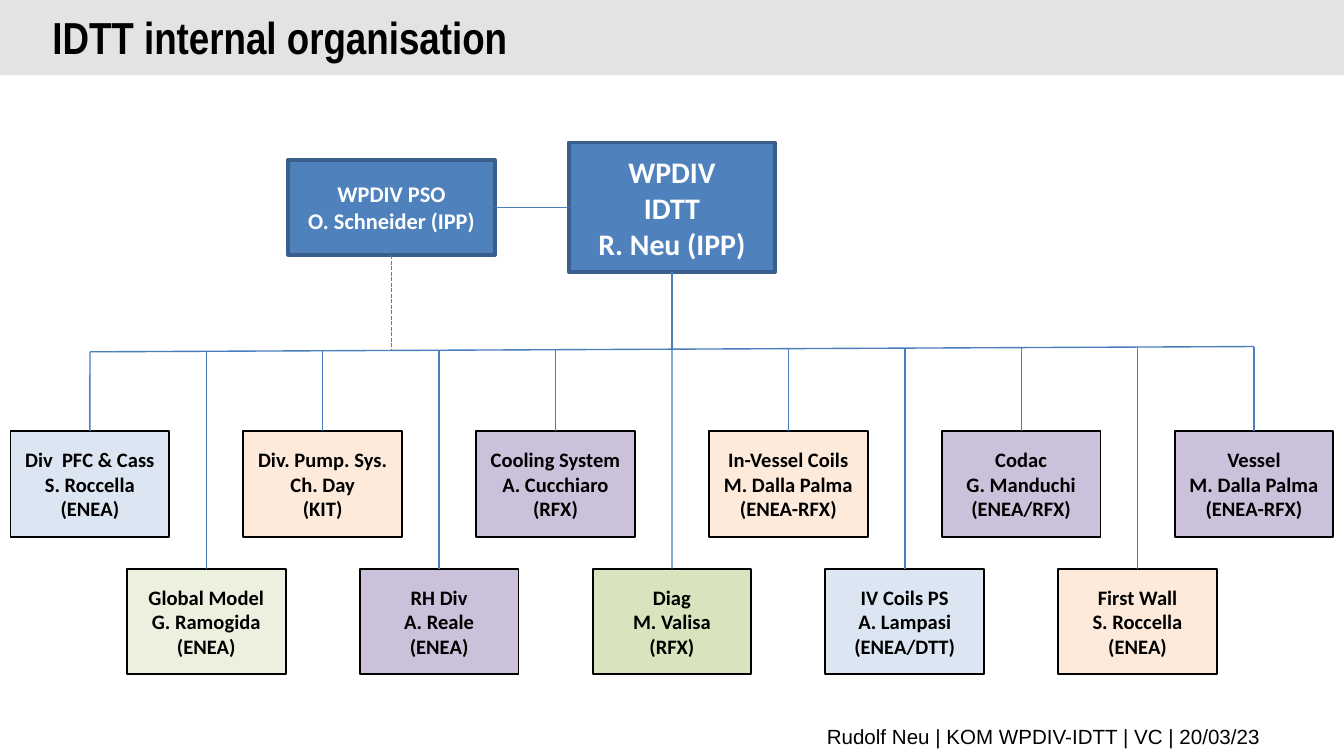
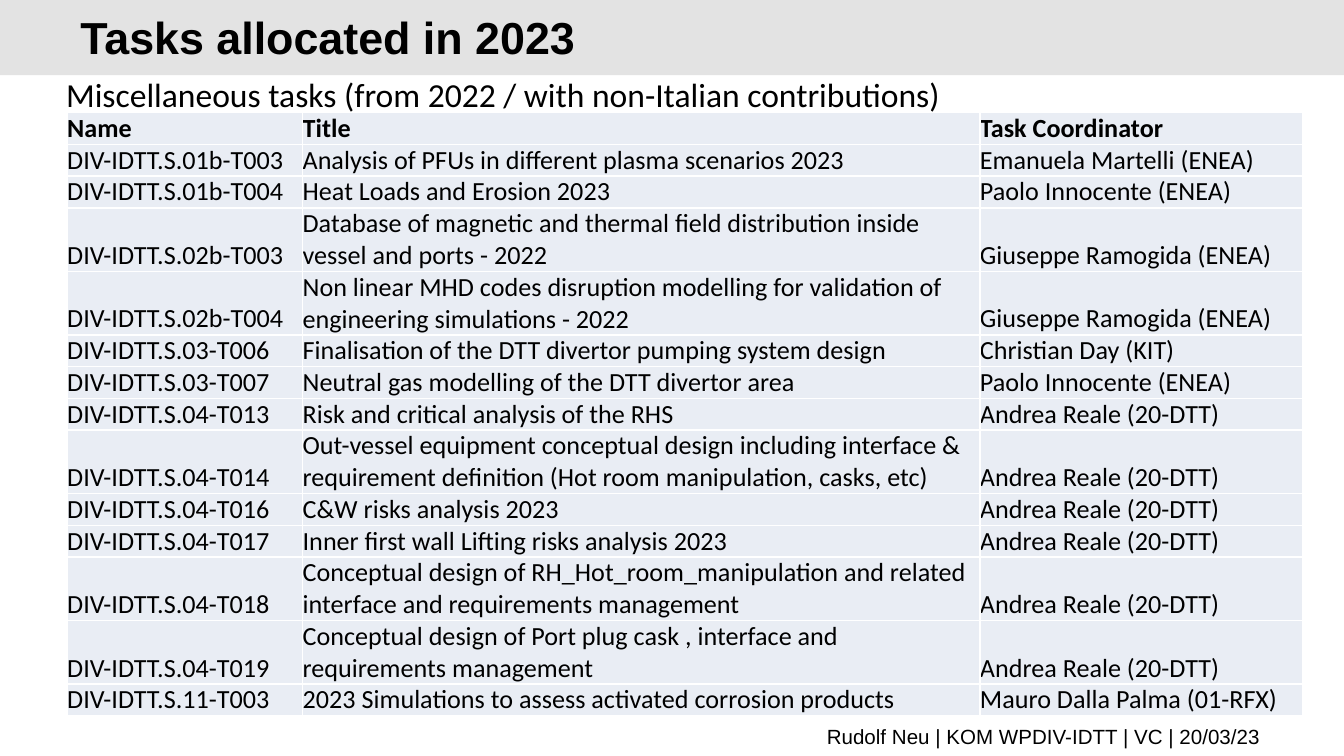
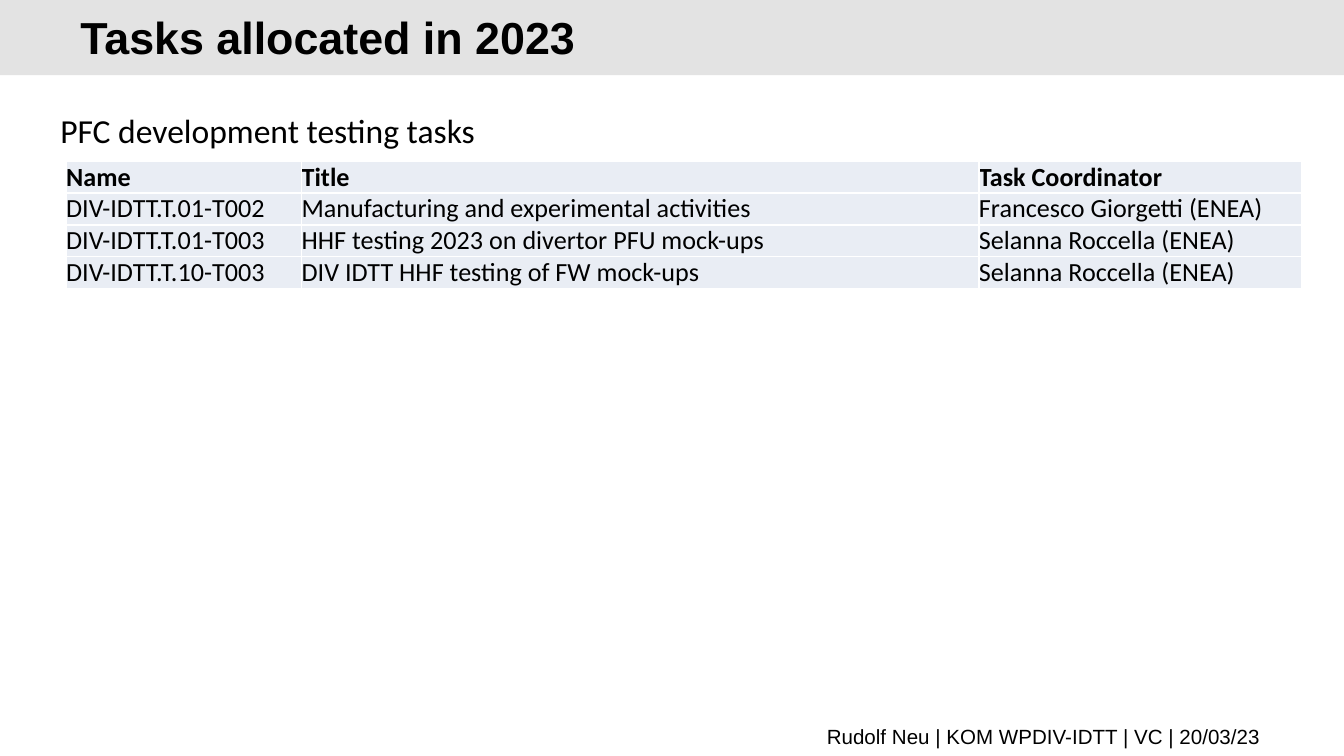
from math import ceil

from lxml import etree
from pptx import Presentation
from pptx.dml.color import RGBColor
from pptx.enum import dml, shapes, text
from pptx.oxml import ns
from pptx.util import Cm, Pt

# Shared look
BLACK = RGBColor(0, 0, 0)
WHITE = RGBColor(255, 255, 255)
BAND = RGBColor(0xE3, 0xE3, 0xE3)
BLUE = RGBColor(0x4F, 0x81, 0xBD)
BLUE_EDGE = RGBColor(0x3A, 0x5F, 0x8C)
LINK = RGBColor(0x4B, 0x7E, 0xBC)
PALE_BLUE = RGBColor(0xDC, 0xE6, 0xF2)
PALE_GREEN = RGBColor(0xEB, 0xF1, 0xDE)
GREEN = RGBColor(0xD7, 0xE4, 0xBD)
ORANGE = RGBColor(0xFD, 0xEA, 0xDA)
PURPLE = RGBColor(0xCC, 0xC1, 0xDA)
CELL = RGBColor(0xE9, 0xED, 0xF4)
BODY, HEAD, NARROW = "Calibri", "Arial", "Arial Narrow"
LEFT, CENTER, RIGHT = text.PP_ALIGN.LEFT, text.PP_ALIGN.CENTER, text.PP_ALIGN.RIGHT
WIDTH, HEIGHT = 25.4, 14.29

FOOTER = "Rudolf Neu | KOM WPDIV-IDTT | VC | 20/03/23 "

# Organisation: lead, support office, then areas from left to right
LEAD = ["WPDIV", "IDTT", "R. Neu (IPP)"]
OFFICE = ["WPDIV PSO", "O. Schneider (IPP)"]
AREAS = [
    ("Div  PFC & Cass", "S. Roccella", "(ENEA)", PALE_BLUE),
    ("Global Model", "G. Ramogida", "(ENEA)", PALE_GREEN),
    ("Div. Pump. Sys.", "Ch. Day", "(KIT)", ORANGE),
    ("RH Div", "A. Reale", "(ENEA)", PURPLE),
    ("Cooling System", "A. Cucchiaro", "(RFX)", PURPLE),
    ("Diag", "M. Valisa", "(RFX)", GREEN),
    ("In-Vessel Coils", "M. Dalla Palma", "(ENEA-RFX)", ORANGE),
    ("IV Coils PS", "A. Lampasi", "(ENEA/DTT)", PALE_BLUE),
    ("Codac", "G. Manduchi", "(ENEA/RFX)", PURPLE),
    ("First Wall", "S. Roccella", "(ENEA)", ORANGE),
    ("Vessel", "M. Dalla Palma", "(ENEA-RFX)", PURPLE),
]

# Task tables
COLUMNS = [("Name", 4.45), ("Title", 12.8), ("Task Coordinator", 6.1)]
ROW_HEIGHT, TITLE_CHARS = 0.6, 60
MISC_TASKS = [
    ("DIV-IDTT.S.01b-T003", "Analysis of PFUs in different plasma scenarios 2023",
     "Emanuela Martelli (ENEA)"),
    ("DIV-IDTT.S.01b-T004", "Heat Loads and Erosion 2023", "Paolo Innocente (ENEA)"),
    ("DIV-IDTT.S.02b-T003", "Database of magnetic and thermal field distribution inside "
     "vessel and ports - 2022", "Giuseppe Ramogida (ENEA)"),
    ("DIV-IDTT.S.02b-T004", "Non linear MHD codes disruption modelling for validation of "
     "engineering simulations - 2022", "Giuseppe Ramogida (ENEA)"),
    ("DIV-IDTT.S.03-T006", "Finalisation of the DTT divertor pumping system design",
     "Christian Day (KIT)"),
    ("DIV-IDTT.S.03-T007", "Neutral gas modelling of the DTT divertor area",
     "Paolo Innocente (ENEA)"),
    ("DIV-IDTT.S.04-T013", "Risk and critical analysis of the RHS", "Andrea Reale (20-DTT)"),
    ("DIV-IDTT.S.04-T014", "Out-vessel equipment conceptual design including interface & "
     "requirement definition (Hot room manipulation, casks, etc)", "Andrea Reale (20-DTT)"),
    ("DIV-IDTT.S.04-T016", "C&W risks analysis 2023", "Andrea Reale (20-DTT)"),
    ("DIV-IDTT.S.04-T017", "Inner first wall Lifting risks analysis 2023",
     "Andrea Reale (20-DTT)"),
    ("DIV-IDTT.S.04-T018", "Conceptual design of RH_Hot_room_manipulation and related "
     "interface and requirements management", "Andrea Reale (20-DTT)"),
    ("DIV-IDTT.S.04-T019", "Conceptual design of Port plug cask , interface and "
     "requirements management", "Andrea Reale (20-DTT)"),
    ("DIV-IDTT.S.11-T003", "2023 Simulations to assess activated corrosion products",
     "Mauro Dalla Palma (01-RFX)"),
]
PFC_TASKS = [
    ("DIV-IDTT.T.01-T002", "Manufacturing and experimental activities",
     "Francesco Giorgetti (ENEA)"),
    ("DIV-IDTT.T.01-T003", "HHF testing 2023 on divertor PFU mock-ups",
     "Selanna Roccella (ENEA)"),
    ("DIV-IDTT.T.10-T003", "DIV IDTT HHF testing of FW mock-ups",
     "Selanna Roccella (ENEA)"),
]
# Heading, its left and top, tasks, table left and top
TASK_PAGES = [
    ("Miscellaneous tasks (from 2022 / with non-Italian contributions)", 1.0, 1.27, 17.25,
     MISC_TASKS, 1.27, 2.13),
    ("PFC development testing tasks", 0.89, 1.96, 8.43, PFC_TASKS, 1.25, 3.05),
]


def write(frame, lines, size, font=BODY, color=BLACK, bold=False, align=LEFT):
    """Fill a text frame with one paragraph, broken into lines; return the paragraph."""
    para = frame.paragraphs[0]
    para.alignment = align
    for number, line in enumerate(lines):
        if number:
            para.add_line_break()
        span = para.add_run()
        span.text = line
        span.font.size, span.font.name, span.font.bold = Pt(size), font, bold
        span.font.color.rgb = color
    return para


def add_text(page, left, top, width, height, line, size, middle=True, wrap=True, **style):
    box = page.shapes.add_textbox(Cm(left), Cm(top), Cm(width), Cm(height))
    frame = box.text_frame
    frame.word_wrap = wrap
    if middle:
        frame.vertical_anchor = text.MSO_ANCHOR.MIDDLE
    if not wrap:
        frame.auto_size = text.MSO_AUTO_SIZE.SHAPE_TO_FIT_TEXT
    return write(frame, [line], size, **style)


def add_box(page, left, top, width, height, fill, edge=None, weight=1):
    box = page.shapes.add_shape(shapes.MSO_SHAPE.RECTANGLE,
                                Cm(left), Cm(top), Cm(width), Cm(height))
    box.shadow.inherit = False
    box.fill.solid()
    box.fill.fore_color.rgb = fill
    if edge is None:
        box.line.fill.background()
    else:
        box.line.color.rgb, box.line.width = edge, Pt(weight)
    box.text_frame.word_wrap = True
    box.text_frame.vertical_anchor = text.MSO_ANCHOR.MIDDLE
    return box


def add_link(page, x1, y1, x2, y2, start=None, end=None):
    """Draw a line; start and end are (box, side) pairs to join."""
    link = page.shapes.add_connector(shapes.MSO_CONNECTOR.STRAIGHT,
                                     Cm(x1), Cm(y1), Cm(x2), Cm(y2))
    if start:
        link.begin_connect(*start)
    if end:
        link.end_connect(*end)
    link.line.color.rgb, link.line.width = LINK, Pt(0.75)
    etree.SubElement(link._element.spPr, ns.qn("a:effectLst"))
    return link


def add_page(deck, title, left, font):
    page = deck.slides.add_slide(deck.slide_layouts[6])
    add_box(page, 0, 0, WIDTH, 1.42, BAND)
    heading = add_text(page, left, 0.15, 20.95, 0.97, title, 24, font=font, bold=True)
    heading.line_spacing = Pt(32)
    add_text(page, 1.3, 13.64, 22.88, 0.56, FOOTER, 11, font=HEAD, align=RIGHT)
    return page


def add_organisation(page):
    first, step, bus_left, bus_right = 1.7, 2.2, 6.65, 6.55
    last = first + step * (len(AREAS) - 1)

    def bus_y(x):
        return bus_left + (bus_right - bus_left) * (x - first) / (last - first)

    # Lead and support office, on one centre line
    heads = []
    for lines, center, height, size in ((LEAD, 12.7, 2.45, 16), (OFFICE, 7.4, 1.8, 12)):
        box = add_box(page, center - 1.95, 3.92 - height / 2, 3.9, height, BLUE, BLUE_EDGE, 2)
        write(box.text_frame, lines, size, color=WHITE, bold=True, align=CENTER)
        drop = add_link(page, center, 3.92, center, bus_y(center), start=(box, 2))
        heads.append((box, drop))
    (lead, _), (office, office_drop) = heads
    office_drop.line.dash_style = dml.MSO_LINE.SQUARE_DOT
    add_link(page, 9.35, 3.92, 10.75, 3.92, (office, 3), (lead, 1))

    # Areas hang from the bus, alternating between two rows
    add_link(page, first, bus_left, last, bus_right)
    for number, (*lines, fill) in enumerate(AREAS):
        center, top = first + step * number, (8.15, 10.75)[number % 2]
        box = add_box(page, center - 1.5, top, 3, 2, fill, BLACK)
        write(box.text_frame, lines, 11, bold=True, align=CENTER)
        add_link(page, center, bus_y(center), center, top, end=(box, 0))


def style_cell(cell):
    cell.fill.solid()
    cell.fill.fore_color.rgb = CELL
    cell.margin_left = cell.margin_right = cell.margin_top = cell.margin_bottom = 0
    cell.vertical_anchor = text.MSO_ANCHOR.BOTTOM
    props = cell._tc.get_or_add_tcPr()
    for position, side in enumerate("LRTB"):
        edge = etree.Element(ns.qn("a:ln" + side), w=str(Pt(1)))
        paint = etree.SubElement(edge, ns.qn("a:solidFill"))
        etree.SubElement(paint, ns.qn("a:srgbClr"), val=str(WHITE))
        props.insert(position, edge)


def add_tasks(page, tasks, left, top):
    rows = [[name for name, _ in COLUMNS], *tasks]
    heights = [ROW_HEIGHT * ceil(len(row[1]) / TITLE_CHARS) for row in rows]
    table = page.shapes.add_table(len(rows), len(COLUMNS), Cm(left), Cm(top),
                                  Cm(sum(width for _, width in COLUMNS)),
                                  Cm(sum(heights))).table
    table.horz_banding = False
    for column, (_, width) in zip(table.columns, COLUMNS):
        column.width = Cm(width)
    for number, (row, height) in enumerate(zip(rows, heights)):
        table.rows[number].height = Cm(height)
        for cell, words in zip(table.rows[number].cells, row):
            style_cell(cell)
            write(cell.text_frame, [words], 14, bold=number == 0)


def main():
    deck = Presentation()
    deck.slide_width, deck.slide_height = Cm(WIDTH), Cm(HEIGHT)
    add_organisation(add_page(deck, "IDTT internal organisation", 0.74, NARROW))
    for heading, x, y, width, tasks, left, top in TASK_PAGES:
        page = add_page(deck, "Tasks allocated in 2023", 1.27, HEAD)
        add_tasks(page, tasks, left, top)
        add_text(page, x, y, width, 1.02, heading, 18, middle=False, wrap=False)
    deck.save("out.pptx")


if __name__ == "__main__":
    main()
